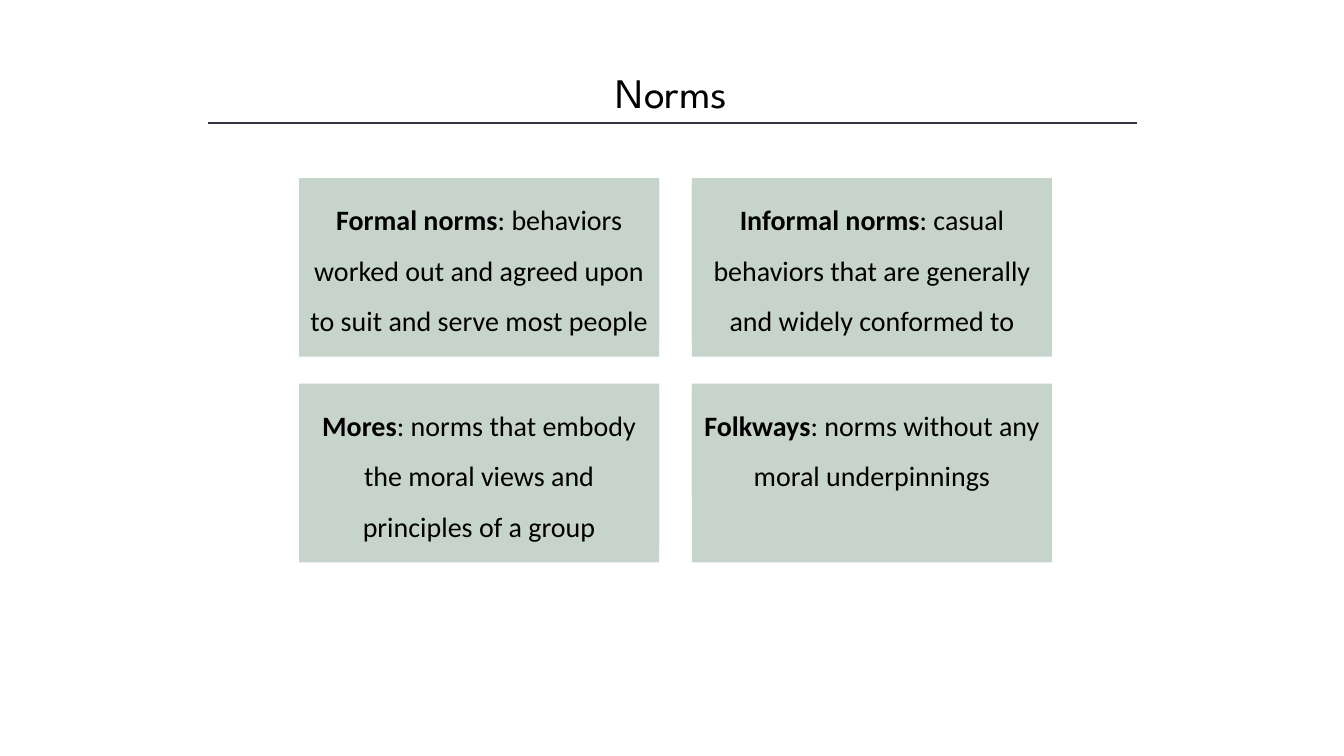
from dataclasses import dataclass

from lxml import etree
from pptx import Presentation
from pptx.dml.color import RGBColor
from pptx.enum.shapes import MSO_CONNECTOR, MSO_SHAPE
from pptx.enum.text import MSO_ANCHOR, MSO_AUTO_SIZE, PP_ALIGN
from pptx.oxml.ns import qn
from pptx.util import Cm, Pt

CENTER = PP_ALIGN.CENTER
TOP, MIDDLE = MSO_ANCHOR.TOP, MSO_ANCHOR.MIDDLE
GROW = MSO_AUTO_SIZE.SHAPE_TO_FIT_TEXT
RECTANGLE, STRAIGHT = MSO_SHAPE.RECTANGLE, MSO_CONNECTOR.STRAIGHT
TITLE_ONLY = 5

# Content: term, definition, number of text lines
TITLE = "Norms"
NORMS = [
    ("Formal norms", ": behaviors worked out and agreed upon to suit and serve most people", 3),
    ("Informal norms", ": casual behaviors that are generally and widely conformed to", 3),
    ("Mores", ": norms that embody the moral views and principles of a group", 3),
    ("Folkways", ": norms without any moral underpinnings", 2),
]


@dataclass(frozen=True)
class Theme:
    text: RGBColor = RGBColor(0x00, 0x00, 0x00)
    rule: RGBColor = RGBColor(0x32, 0x35, 0x42)
    card: RGBColor = RGBColor(0xC7, 0xD4, 0xCB)
    title_font: str = "League Spartan"
    body_font: str = "Calibri"
    title_size: Pt = Pt(30)
    body_size: Pt = Pt(20)


THEME = Theme()

# Card grid, in centimetres
COLUMNS = 2
GRID_LEFT, GRID_TOP = 7.54, 4.49
CARD_WIDTH, CARD_HEIGHT = 9.07, 4.5
COLUMN_STEP, ROW_STEP = 9.9, 5.18
LABEL_DROP = 0.12
LINE_HEIGHT, LABEL_PADDING = 1.27, 0.15


def add_span(para, text, font, size, bold=False):
    span = para.add_run()
    span.text = text
    span.font.name = font
    span.font.size = size
    span.font.bold = bold
    span.font.color.rgb = THEME.text


def add_panel(page, left, top, height):
    panel = page.shapes.add_shape(RECTANGLE, Cm(left), Cm(top), Cm(CARD_WIDTH), Cm(height))
    panel.shadow.inherit = False
    panel.fill.solid()
    panel.fill.fore_color.rgb = THEME.card
    panel.line.fill.background()
    return panel


def add_title(page):
    box = page.shapes.title
    box.left, box.top, box.width, box.height = Cm(4.23), Cm(1.54), Cm(25.4), Cm(1.54)
    frame = box.text_frame
    frame.word_wrap = True
    frame.auto_size = GROW
    frame.vertical_anchor = TOP
    para = frame.paragraphs[0]
    para.alignment = CENTER
    add_span(para, TITLE, THEME.title_font, THEME.title_size)


def add_rule(page):
    rule = page.shapes.add_connector(STRAIGHT, Cm(5.23), Cm(3.1), Cm(28.65), Cm(3.1))
    rule.line.color.rgb = THEME.rule
    rule.line.width = Pt(1)
    etree.SubElement(rule._element.spPr, qn("a:effectLst"))


def add_card(page, index, term, definition, lines):
    row, column = divmod(index, COLUMNS)
    left = GRID_LEFT + column * COLUMN_STEP
    top = GRID_TOP + row * ROW_STEP
    add_panel(page, left, top, CARD_HEIGHT)

    # Term and definition over the card
    label = add_panel(page, left, top + LABEL_DROP, lines * LINE_HEIGHT + LABEL_PADDING)
    frame = label.text_frame
    frame.word_wrap = True
    frame.auto_size = GROW
    frame.vertical_anchor = MIDDLE
    para = frame.paragraphs[0]
    para.alignment = CENTER
    para.line_spacing = 1.5
    add_span(para, term, THEME.body_font, THEME.body_size, bold=True)
    add_span(para, definition, THEME.body_font, THEME.body_size)


def main():
    deck = Presentation()
    deck.slide_width, deck.slide_height = Cm(33.87), Cm(19.05)
    page = deck.slides.add_slide(deck.slide_layouts[TITLE_ONLY])
    add_title(page)
    add_rule(page)
    for index, norm in enumerate(NORMS):
        add_card(page, index, *norm)
    deck.save("out.pptx")


if __name__ == "__main__":
    main()
